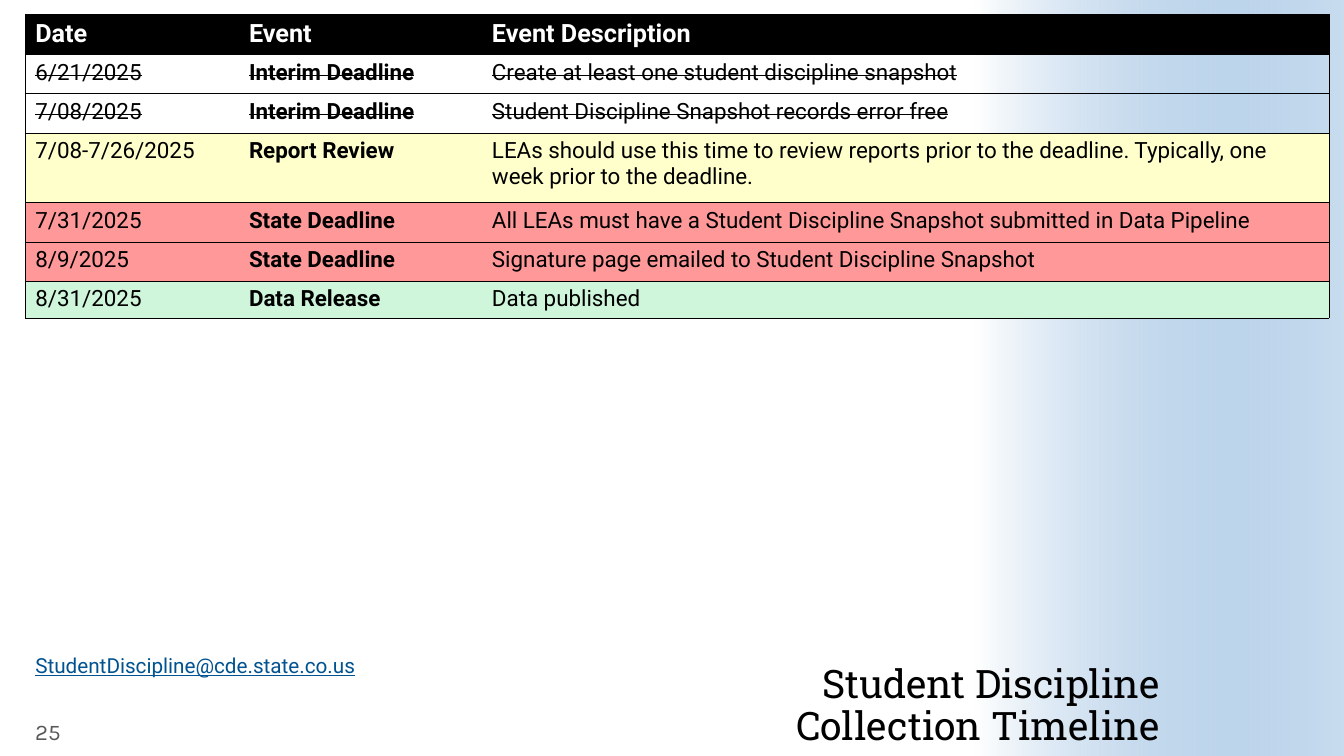
from lxml import etree
from pptx import Presentation
from pptx import util as u
from pptx.dml.color import RGBColor
from pptx.enum import shapes, text
from pptx.oxml import ns

PX = u.Inches(1) // 100
BLACK = RGBColor(0x00, 0x00, 0x00)
WHITE = RGBColor(0xFF, 0xFF, 0xFF)
GREY = RGBColor(0x59, 0x59, 0x59)
LINK_BLUE = RGBColor(0x00, 0x53, 0x90)
BAND_BLUE = RGBColor(0x48, 0x8B, 0xC9)
YELLOW = RGBColor(0xFF, 0xFF, 0xCC)
RED = RGBColor(0xFF, 0x99, 0x99)
GREEN = RGBColor(0xCF, 0xF5, 0xDA)
PLAIN_TABLE_STYLE = "{2D5ABB26-0587-4C30-8999-92F81FD0307C}"

COLUMN_WIDTHS = (212, 241, 840)
HEADINGS = ("Date", "Event", "Event Description")
TIMELINE = (
    ("6/21/2025", "Interim Deadline", "Create at least one student discipline snapshot", None, 39),
    ("7/08/2025", "Interim Deadline", "Student Discipline Snapshot records error free", None, 39),
    ("7/08-7/26/2025", "Report Review",
     "LEAs should use this time to review reports prior to the deadline. "
     "Typically, one week prior to the deadline.", YELLOW, 69),
    ("7/31/2025", "State Deadline",
     "All LEAs must have a Student Discipline Snapshot submitted in Data Pipeline", RED, 39),
    ("8/9/2025", "State Deadline", "Signature page emailed to Student Discipline Snapshot", RED, 39),
    ("8/31/2025", "Data Release", "Data published", GREEN, 35),
)


def emu(box):
    return [value * PX for value in box]


def place(shape, box):
    shape.left, shape.top, shape.width, shape.height = emu(box)


def add_child(parent, tag, **attributes):
    return etree.SubElement(parent, ns.qn(tag), attributes)


def write(frame, words, color, font_format, frame_format, paragraph_format):
    for name, value in frame_format.items():
        setattr(frame, name, value)
    frame.text = words
    paragraph = frame.paragraphs[0]
    for name, value in paragraph_format.items():
        setattr(paragraph, name, value)
    font = paragraph.runs[0].font if len(paragraph.runs) == 1 else paragraph.font
    for target in [run.font for run in paragraph.runs] or [font]:
        for name, value in font_format.items():
            setattr(target, name, value)
        target.color.rgb = color
    return paragraph


def add_side_band(slide, box):
    left, top, width, height = box
    turned = (left + (width - height) // 2, top + (height - width) // 2, height, width)
    band = slide.shapes.add_shape(shapes.MSO_SHAPE.RECTANGLE, *emu(turned))
    band.rotation = 270
    band.shadow.inherit = False
    band.line.fill.background()
    band.fill.gradient()
    band.fill.gradient_angle = 270
    for stop, color, position in zip(band.fill.gradient_stops, (WHITE, BAND_BLUE), (0, 1)):
        stop.color.rgb = color
        stop.position = position
    blue = band._element.xpath(".//a:gs/a:srgbClr")[-1]
    add_child(blue, "a:alpha", val="30000")
    slide.slide_layout.shapes._spTree.insert(2, band._element)


def add_title(slide, box):
    title = slide.shapes.title
    place(title, box)
    write(title.text_frame, "Student Discipline\vCollection Timeline", BLACK,
          {"name": "Roboto Slab", "size": u.Pt(28)},
          {"margin_left": 0, "margin_top": 0, "margin_right": 0, "margin_bottom": 0,
           "vertical_anchor": text.MSO_ANCHOR.BOTTOM, "word_wrap": True,
           "auto_size": text.MSO_AUTO_SIZE.NONE},
          {"alignment": text.PP_ALIGN.RIGHT, "line_spacing": 0.9})


def add_contact(slide, box):
    contact = slide.placeholders[1]
    place(contact, box)
    paragraph = write(contact.text_frame, "StudentDiscipline@cde.state.co.us", LINK_BLUE,
                      {"name": "Roboto", "size": u.Pt(14.8), "underline": True},
                      {"word_wrap": True, "auto_size": text.MSO_AUTO_SIZE.NONE},
                      {"line_spacing": 0.8, "space_before": u.Pt(0)})
    properties = paragraph._p.get_or_add_pPr()
    properties.set("marL", "0")
    properties.set("indent", "0")
    add_child(properties, "a:buNone")


def add_page_number(slide, box):
    number = slide.shapes.add_textbox(*emu(box))
    write(number.text_frame, "25", GREY, {"name": "Karla", "size": u.Pt(16)},
          {"word_wrap": True, "vertical_anchor": text.MSO_ANCHOR.MIDDLE}, {})


def set_borders(cell, visible):
    properties = cell._tc.get_or_add_tcPr()
    for side in "LRTB":
        line = add_child(properties, f"a:ln{side}", w=str(u.Pt(0.5)))
        if side in visible:
            fill = add_child(line, "a:solidFill")
            add_child(fill, "a:srgbClr", val=str(BLACK))
        else:
            add_child(line, "a:noFill")


def fill_row(table, row, words, color, fill, size, bold_columns, strike):
    last = len(words) - 1
    for column, entry in enumerate(words):
        cell = table.cell(row, column)
        visible = "TB" + ("L" if column == 0 else "") + ("R" if column == last else "")
        set_borders(cell, visible)
        if fill is None:
            cell.fill.background()
        else:
            cell.fill.solid()
            cell.fill.fore_color.rgb = fill
        paragraph = write(cell.text_frame, entry, color,
                          {"name": "Roboto", "size": u.Pt(size), "bold": column in bold_columns},
                          {}, {})
        if strike:
            paragraph.runs[0].font._element.set("strike", "sngStrike")


def add_timeline(slide, box):
    frame = slide.shapes.add_table(len(TIMELINE) + 1, len(HEADINGS), *emu(box))
    table = frame.table
    frame._element.xpath(".//a:tableStyleId")[0].text = PLAIN_TABLE_STYLE
    table.horz_banding = False
    for column, width in zip(table.columns, COLUMN_WIDTHS):
        column.width = width * PX
    table.rows[0].height = 39 * PX
    fill_row(table, 0, HEADINGS, WHITE, BLACK, 18, (0, 1, 2), False)
    for row, (date, event, description, fill, height) in enumerate(TIMELINE, 1):
        table.rows[row].height = height * PX
        fill_row(table, row, (date, event, description), BLACK, fill, 16, (1,), fill is None)


def main():
    presentation = Presentation()
    presentation.slide_width, presentation.slide_height = 1333 * PX, 750 * PX
    slide = presentation.slides.add_slide(presentation.slide_layouts[1])
    add_side_band(slide, (967, 0, 366, 750))
    add_title(slide, (426, 645, 724, 98))
    add_page_number(slide, (25, 710, 85, 31))
    add_contact(slide, (25, 647, 389, 31))
    add_timeline(slide, (25, 14, 1293, 303))
    presentation.save("out.pptx")


if __name__ == "__main__":
    main()
